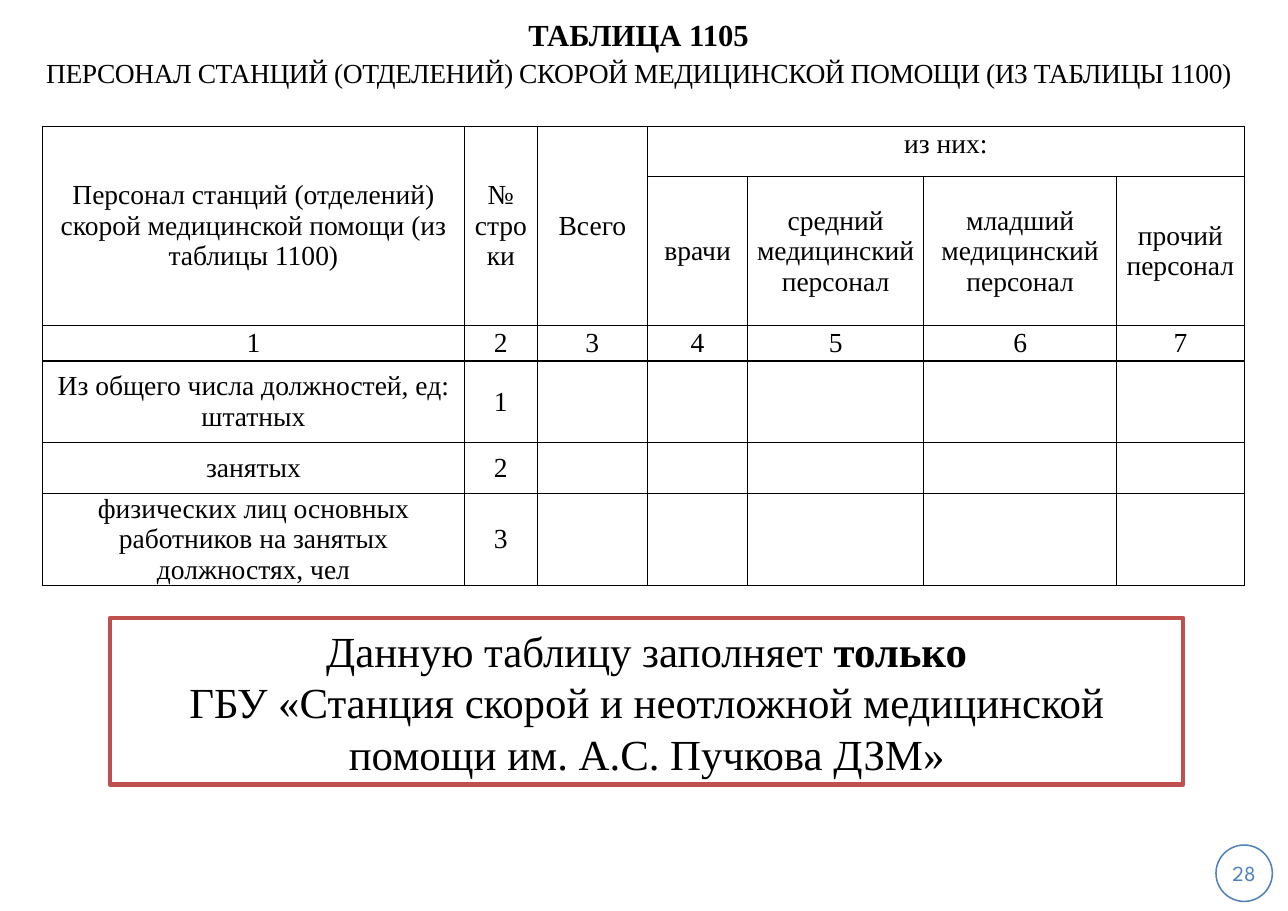
from lxml import etree
from pptx import Presentation
from pptx.dml.color import RGBColor
from pptx.enum.shapes import MSO_SHAPE
from pptx.enum.text import MSO_ANCHOR, MSO_AUTO_SIZE, PP_ALIGN
from pptx.oxml.ns import qn
from pptx.util import Cm, Pt

RECT, OVAL = MSO_SHAPE.RECTANGLE, MSO_SHAPE.OVAL
MIDDLE, CENTER, NO_FIT = MSO_ANCHOR.MIDDLE, PP_ALIGN.CENTER, MSO_AUTO_SIZE.NONE
FONT = "Times New Roman"
BLACK, WHITE, RED, BLUE = "000000", "FFFFFF", "C0504D", "4F81BD"

COLUMNS = [9.73, 1.68, 2.54, 2.31, 4.06, 4.45, 2.94]
ROWS = [1.16, 3.44, 0.81, 1.88, 1.18, 2.1]
HEADERS = ["Персонал станций (отделений) скорой медицинской помощи (из таблицы 1100)",
           "№\nстроки", "Всего", "из них:"]
STAFF = ["врачи", "средний медицинский\nперсонал", "младший\nмедицинский\nперсонал",
         "прочий персонал"]
LINES = ["Из общего числа должностей, ед:\nштатных", "занятых",
         "физических лиц основных работников на занятых\nдолжностях, чел"]


def rgb(color):
    return RGBColor.from_string(color)


def add_run(p, text, size=18, font=FONT, color=BLACK, bold=False, spacing=None):
    r = p.add_run()
    r.text = text
    r.font.size, r.font.name, r.font.bold = Pt(size), font, bold
    r.font.color.rgb = rgb(color)
    if spacing is not None:
        r.font._element.set("spc", str(round(spacing * 100)))


def write(tf, text, line_spacing=None, **fmt):
    """Fill a text frame with centred paragraphs, one for each line of text."""
    for i, line in enumerate(text.split("\n")):
        p = tf.add_paragraph() if i else tf.paragraphs[0]
        p.alignment = CENTER
        p.line_spacing = line_spacing
        add_run(p, line, **fmt)


def set_margins(tf, left, top, right, bottom):
    tf.margin_left, tf.margin_top = Cm(left), Cm(top)
    tf.margin_right, tf.margin_bottom = Cm(right), Cm(bottom)


def add_box(slide, kind, left, top, width, height, line, weight, fill=None):
    sp = slide.shapes.add_shape(kind, Cm(left), Cm(top), Cm(width), Cm(height))
    sp.shadow.inherit = False
    if fill:
        sp.fill.solid()
        sp.fill.fore_color.rgb = rgb(fill)
    else:
        sp.fill.background()
    sp.line.color.rgb = rgb(line)
    sp.line.width = Pt(weight)
    tf = sp.text_frame
    tf.word_wrap = True
    tf.vertical_anchor = MIDDLE
    return tf


def add_title(slide):
    title = slide.shapes.title
    title.left, title.top, title.width, title.height = Cm(0), Cm(0), Cm(29.7), Cm(2.41)
    tf = title.text_frame
    tf.auto_size = NO_FIT
    tf.vertical_anchor = MIDDLE
    set_margins(tf, 0, 0.13, 0.25, 0.13)
    write(tf, "ТАБЛИЦА 1105", size=20, bold=True)
    p = tf.add_paragraph()
    p.alignment = CENTER
    p.space_before = Pt(2)
    add_run(p, "ПЕРСОНАЛ СТАНЦИЙ (ОТДЕЛЕНИЙ) СКОРОЙ МЕДИЦИНСКОЙ ПОМОЩИ (ИЗ ТАБЛИЦЫ 1100)",
            spacing=-0.3)


def format_cell(cell):
    set_margins(cell, 0.18, 0, 0.18, 0)
    cell.vertical_anchor = MIDDLE
    tcPr = cell._tc.get_or_add_tcPr()
    for side in ("a:lnL", "a:lnR", "a:lnT", "a:lnB"):
        ln = etree.SubElement(tcPr, qn(side), w=str(Pt(1)))
        fill = etree.SubElement(ln, qn("a:solidFill"))
        etree.SubElement(fill, qn("a:srgbClr"), val=BLACK)
    cell.fill.background()


def add_staff_table(slide):
    frame = slide.shapes.add_table(len(ROWS), len(COLUMNS), Cm(0.98), Cm(2.91),
                                   Cm(sum(COLUMNS)), Cm(sum(ROWS)))
    table = frame.table
    table.first_row = table.horz_banding = False
    for column, width in zip(table.columns, COLUMNS):
        column.width = Cm(width)
    for row, height in zip(table.rows, ROWS):
        row.height = Cm(height)
    for cell in table.iter_cells():
        format_cell(cell)

    for c in range(3):
        table.cell(0, c).merge(table.cell(1, c))
    table.cell(0, 3).merge(table.cell(0, 6))
    for c, text in enumerate(HEADERS):
        write(table.cell(0, c).text_frame, text, line_spacing=Pt(11) if c == 3 else None)
    for c, text in enumerate(STAFF, 3):
        write(table.cell(1, c).text_frame, text)
    for c in range(len(COLUMNS)):
        write(table.cell(2, c).text_frame, str(c + 1))
    for number, text in enumerate(LINES, 1):
        write(table.cell(number + 2, 0).text_frame, text)
        write(table.cell(number + 2, 1).text_frame, str(number))


def add_note(slide):
    tf = add_box(slide, RECT, 2.54, 14.25, 24.74, 3.84, RED, 3, WHITE)
    write(tf, "Данную таблицу заполняет ", size=28)
    add_run(tf.paragraphs[0], "только", size=28, bold=True)
    p = tf.add_paragraph()
    p.alignment = CENTER
    add_run(p, "ГБУ «Станция скорой и неотложной медицинской помощи им. А.С. Пучкова ДЗМ»",
            size=28)


def add_page_number(slide):
    tf = add_box(slide, OVAL, 28.04, 19.48, 1.3, 1.3, BLUE, 1)
    set_margins(tf, 0, 0, 0, 0)
    write(tf, "28", size=14, font="League Spartan", color=BLUE)


def main():
    prs = Presentation()
    prs.slide_width, prs.slide_height = Cm(29.7), Cm(21)
    slide = prs.slides.add_slide(prs.slide_layouts[5])
    add_page_number(slide)
    add_title(slide)
    add_staff_table(slide)
    add_note(slide)
    prs.save("out.pptx")


if __name__ == "__main__":
    main()
